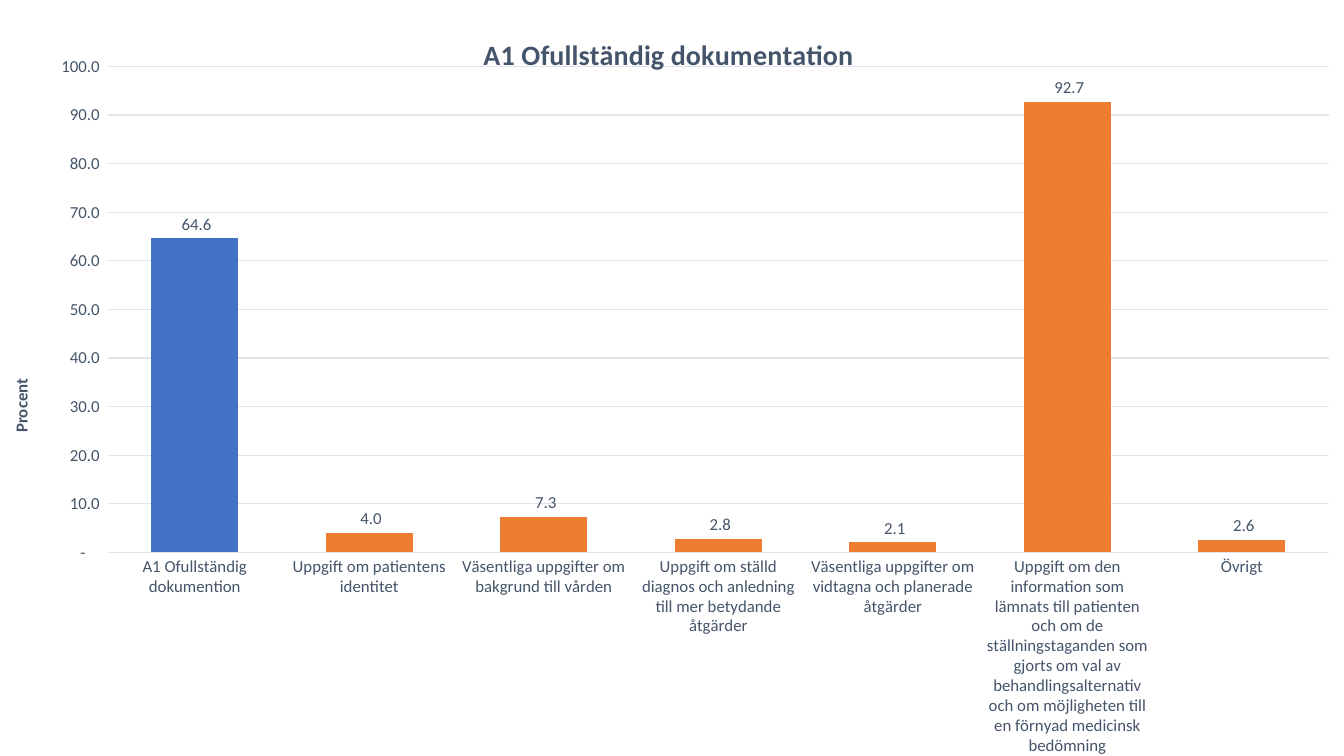
from lxml import etree
from pptx import Presentation
from pptx.chart.data import CategoryChartData
from pptx.dml.color import RGBColor
from pptx.enum.chart import XL_CHART_TYPE, XL_LABEL_POSITION, XL_TICK_MARK
from pptx.oxml.ns import qn
from pptx.util import Inches, Pt

COLUMN = XL_CHART_TYPE.COLUMN_CLUSTERED
OUTSIDE_END = XL_LABEL_POSITION.OUTSIDE_END
NO_TICKS = XL_TICK_MARK.NONE

COLORS = {"text": "44546A", "grid": "E0E5EB", "total": "4472C4", "detail": "ED7D31"}
FONT = "Calibri"
NUMBER_FORMAT = r'_-* #\ ##0.0_-;\-* #\ ##0.0_-;_-* "-"??_'

SHARES = {
    "A1 Ofullständig dokumention": 64.6,
    "Uppgift om patientens identitet": 4.0,
    "Väsentliga uppgifter om bakgrund till vården": 7.3,
    "Uppgift om ställd diagnos och anledning till mer betydande åtgärder": 2.8,
    "Väsentliga uppgifter om vidtagna och planerade åtgärder": 2.1,
    "Uppgift om den information som lämnats till patienten och om de "
    "ställningstaganden som gjorts om val av behandlingsalternativ och om "
    "möjligheten till en förnyad medicinsk bedömning": 92.7,
    "Övrigt": 2.6,
}


def color(name):
    return RGBColor.from_string(COLORS[name])


def style_font(font, size, bold=False):
    font.name = FONT
    font.size = Pt(size)
    font.bold = bold
    font.color.rgb = color("text")


def style_line(line):
    line.color.rgb = color("grid")
    line.width = Pt(0.75)


def set_layout(element, index, **settings):
    """Replace the element's automatic layout with a manual one, in chart fractions."""
    for layout in element.findall(qn("c:layout")):
        element.remove(layout)
    layout = etree.Element(qn("c:layout"))
    manual = etree.SubElement(layout, qn("c:manualLayout"))
    for name, value in settings.items():
        etree.SubElement(manual, qn(f"c:{name}")).set("val", str(value))
    element.insert(index, layout)


def write_title(title, text, size, x, y):
    run = title.text_frame.paragraphs[0].add_run()
    run.text = text
    style_font(run.font, size, bold=True)
    set_layout(title._element, 1, xMode="edge", yMode="edge", x=x, y=y)


def style_axes(chart):
    category_axis, value_axis = chart.category_axis, chart.value_axis
    for axis in (category_axis, value_axis):
        axis.major_tick_mark = axis.minor_tick_mark = NO_TICKS
        style_font(axis.tick_labels.font, 12)
    style_line(category_axis.format.line)
    style_line(value_axis.major_gridlines.format.line)
    value_axis.format.line.fill.background()
    value_axis.minimum_scale, value_axis.maximum_scale = 0, 100
    value_axis.major_unit = 10
    value_axis.tick_labels.number_format = NUMBER_FORMAT
    value_axis.tick_labels.number_format_is_linked = False
    write_title(value_axis.axis_title, "Procent", 12, x=0.005, y=0.497)
    body = value_axis.axis_title.text_frame._txBody.bodyPr
    body.set("rot", "-5400000")
    body.set("vert", "horz")


def style_columns(plot):
    plot.gap_width = 100
    plot.overlap = -24
    plot.vary_by_categories = False
    series = plot.series[0]
    series.format.fill.solid()
    series.format.fill.fore_color.rgb = color("total")
    for index in range(1, len(SHARES)):
        fill = series.points[index].format.fill
        fill.solid()
        fill.fore_color.rgb = color("detail")
    labels = series.data_labels
    labels.show_value = True
    labels.position = OUTSIDE_END
    labels.number_format = NUMBER_FORMAT
    labels.number_format_is_linked = False
    style_font(labels.font, 12)


def add_share_chart(slide, left, top, width, height):
    data = CategoryChartData()
    data.categories = list(SHARES)
    data.add_series("Series 1", list(SHARES.values()))
    chart = slide.shapes.add_chart(COLUMN, left, top, width, height, data).chart
    chart.has_legend = False
    chart.font.name = FONT
    chart.font.size = Pt(10)
    write_title(chart.chart_title, "A1 Ofullständig dokumentation", 20, x=0.356, y=0.04)
    chart.chart_title.include_in_layout = False
    style_axes(chart)
    style_columns(chart.plots[0])
    set_layout(chart._chartSpace.chart.plotArea, 0, layoutTarget="inner",
               xMode="edge", yMode="edge", x=0.08, y=0.088, w=0.909, h=0.643)


def main():
    presentation = Presentation()
    presentation.slide_width = Inches(13.33)
    presentation.slide_height = Inches(7.5)
    slide = presentation.slides.add_slide(presentation.slide_layouts[6])
    add_share_chart(slide, 0, 0, presentation.slide_width, presentation.slide_height)
    presentation.save("out.pptx")


if __name__ == "__main__":
    main()
